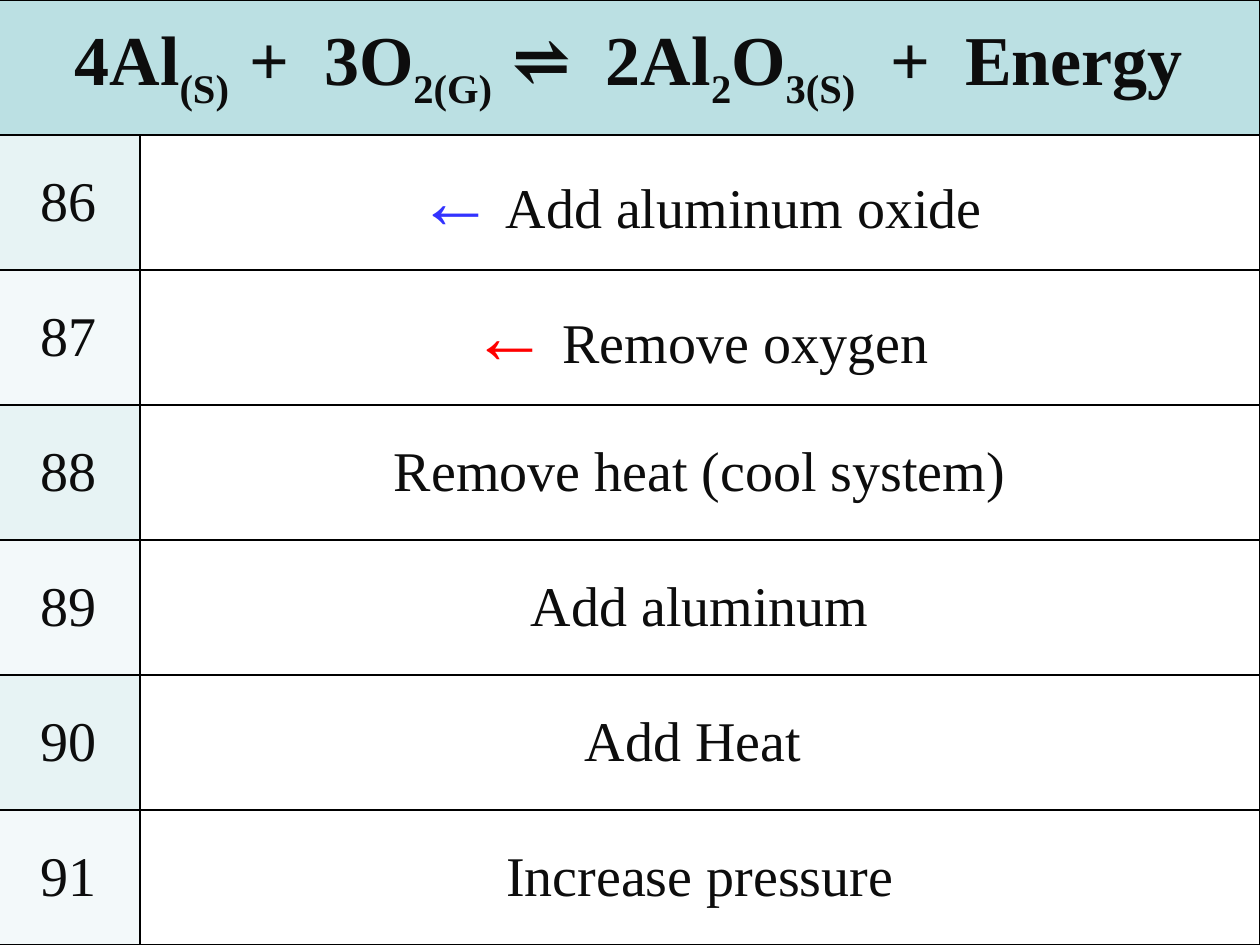
import pptx
import pptx.dml.color
import pptx.enum.text
import pptx.oxml
import pptx.oxml.ns
import pptx.util

Inches = pptx.util.Inches
INK = "0D0D0D"
HEADER_FILL = "BBE0E3"
BAND_FILLS = ["E7F3F4", "F3F9FA"]

# Header equation as (text, is_subscript)
EQUATION = [
    ("4Al", False), ("(S)  ", True), ("+  3O", False), ("2(G)  ", True),
    ("⇌  2Al", False), ("2", True), ("O", False), ("3(S)", True),
    ("  +  Energy", False),
]
# Each change, with the colour of its shift arrow if it has one
CHANGES = [
    ("Add aluminum oxide", "3333FF"),
    ("Remove oxygen", "FF0000"),
    ("Remove heat (cool system)", None),
    ("Add aluminum", None),
    ("Add Heat ", None),
    ("Increase pressure", None),
]
FIRST_NUMBER = 86


def rgb(value):
    return pptx.dml.color.RGBColor.from_string(value)


def add_text(p, text, size=32, color=INK, bold=False, subscript=False):
    r = p.add_run()
    r.text = text
    r.font.name = "Times New Roman"
    r.font.size = pptx.util.Pt(size)
    r.font.bold = bold
    r.font.color.rgb = rgb(color)
    if subscript:
        r.font._element.set("baseline", "-25000")


class SlideBuilder:
    border_color = "000000"
    border_width = pptx.util.Pt(1)

    def __init__(self, prs):
        self.s = prs.slides.add_slide(prs.slide_layouts[6])

    def table(self, left, top, widths, heights):
        frame = self.s.shapes.add_table(
            len(heights), len(widths), Inches(left), Inches(top),
            Inches(sum(widths)), Inches(sum(heights)))
        table = frame.table
        for column, width in zip(table.columns, widths):
            column.width = Inches(width)
        for row, height in zip(table.rows, heights):
            row.height = Inches(height)
        for cell in table.iter_cells():
            cell.fill.background()
            self.borders(cell)
        return table

    def borders(self, cell):
        tcPr = cell._tc.get_or_add_tcPr()
        for i, side in enumerate(("lnL", "lnR", "lnT", "lnB")):
            tcPr.insert(i, pptx.oxml.parse_xml(
                f'<a:{side} {pptx.oxml.ns.nsdecls("a")} w="{self.border_width}">'
                f'<a:solidFill><a:srgbClr val="{self.border_color}"/></a:solidFill>'
                f'</a:{side}>'))

    def cell(self, cell, fill=None):
        """Format a cell and return its centred paragraph."""
        if fill:
            cell.fill.solid()
            cell.fill.fore_color.rgb = rgb(fill)
        cell.vertical_anchor = pptx.enum.text.MSO_ANCHOR.MIDDLE
        p = cell.text_frame.paragraphs[0]
        p.alignment = pptx.enum.text.PP_ALIGN.CENTER
        return p


def main():
    prs = pptx.Presentation()
    prs.slide_width, prs.slide_height = Inches(10), Inches(7.5)
    slide = SlideBuilder(prs)
    row_count = len(CHANGES) + 1
    table = slide.table(-0.02, 0, [1.13, 8.89], [7.5 / row_count] * row_count)

    # Equation across both columns
    table.cell(0, 0).merge(table.cell(0, 1))
    p = slide.cell(table.cell(0, 0), HEADER_FILL)
    for text, subscript in EQUATION:
        add_text(p, text, size=40, bold=True, subscript=subscript)

    # Numbered changes
    for i, (change, arrow_color) in enumerate(CHANGES):
        p = slide.cell(table.cell(i + 1, 0), BAND_FILLS[i % 2])
        add_text(p, str(FIRST_NUMBER + i))
        p = slide.cell(table.cell(i + 1, 1))
        if arrow_color:
            add_text(p, "←", size=44, color=arrow_color)
            change = " " + change
        add_text(p, change)

    prs.save("out.pptx")


if __name__ == "__main__":
    main()
